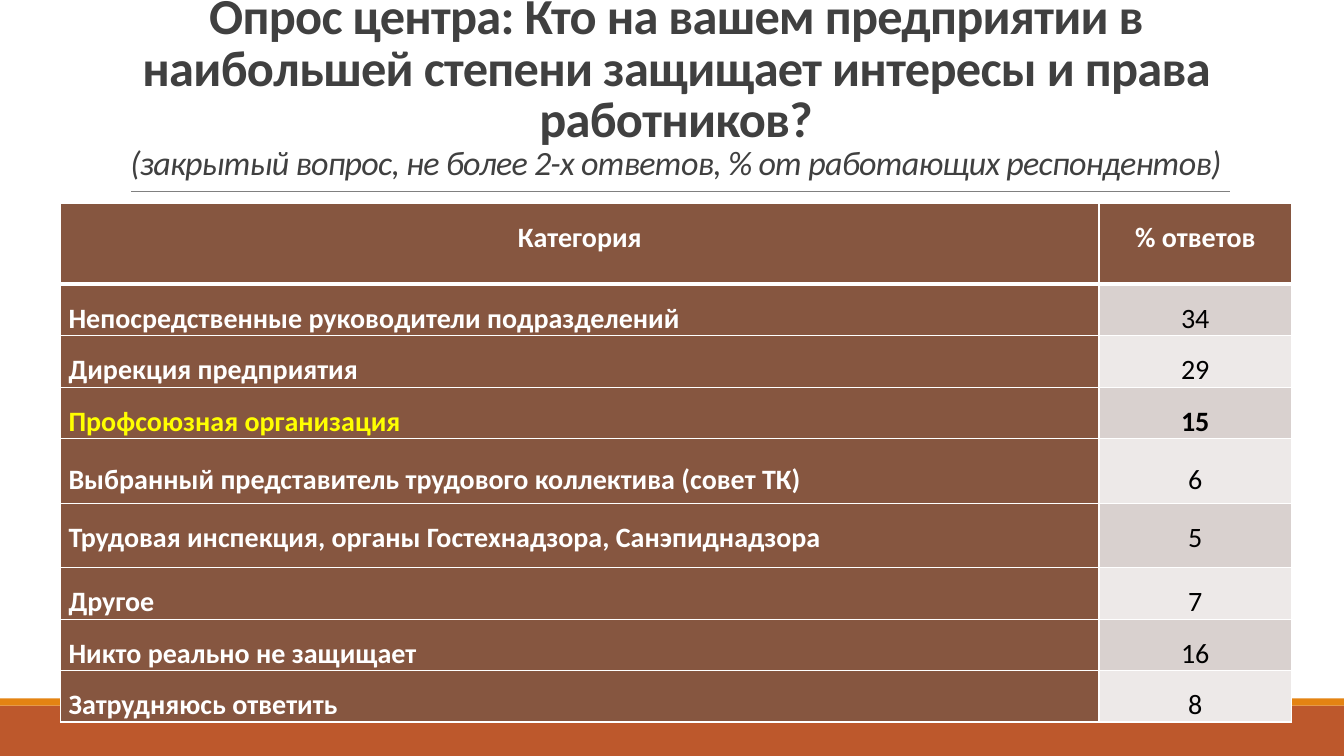
from lxml import etree
from pptx import Presentation
from pptx.dml.color import RGBColor
from pptx.enum import shapes, text
from pptx.oxml.ns import qn
from pptx.util import Inches, Pt

ALIGN = text.PP_ALIGN
ANCHOR = text.MSO_ANCHOR
BROWN, WHITE, BLACK, YELLOW = "865640", "FFFFFF", "000000", "FFFF00"
BANDS = ["D9D1CF", "EDE9E8"]
ROWS = [
    ("Непосредственные руководители подразделений", 34),
    ("Дирекция предприятия", 29),
    ("Профсоюзная организация", 15),
    ("Выбранный представитель трудового коллектива (совет ТК)", 6),
    ("Трудовая инспекция, органы Гостехнадзора, Санэпиднадзора", 5),
    ("Другое", 7),
    ("Никто реально не защищает", 16),
    ("Затрудняюсь ответить", 8),
]
HIGHLIGHT_ROW, TOP_ROW = 3, 5
HEADER_HEIGHT, ROW_HEIGHT, TALL_HEIGHT = 0.8, 0.45, 0.64
TALL_ROWS = (4, 5)


def rgb(value):
    return RGBColor.from_string(value)


class SurveySlide:
    font = "Calibri"

    def __init__(self, prs):
        self.s = prs.slides.add_slide(prs.slide_layouts[5])

    def style(self, font, size, color, bold=False, italic=False):
        font.name, font.size = self.font, Pt(size)
        font.bold, font.italic = bold, italic
        font.color.rgb = rgb(color)

    def bar(self, top, height, color):
        sp = self.s.shapes.add_shape(shapes.MSO_SHAPE.RECTANGLE, 0, Inches(top),
                                     Inches(13.33), Inches(height))
        sp.shadow.inherit = False
        sp.fill.solid()
        sp.fill.fore_color.rgb = rgb(color)
        sp.line.fill.background()

    def rule(self, left, right, y, color, width):
        line = self.s.shapes.add_connector(shapes.MSO_CONNECTOR.STRAIGHT, Inches(left),
                                           Inches(y), Inches(right), Inches(y))
        line.line.color.rgb = rgb(color)
        line.line.width = Pt(width)
        etree.SubElement(line._element.spPr, qn("a:effectLst"))

    def title(self, question, note):
        sp = self.s.shapes.title
        sp.left, sp.top = Inches(0.6), Inches(0.52)
        sp.width, sp.height = Inches(12.21), Inches(1.34)
        tf = sp.text_frame
        tf.auto_size = text.MSO_AUTO_SIZE.NONE
        tf.word_wrap = True
        tf.vertical_anchor = ANCHOR.BOTTOM
        p = tf.paragraphs[0]
        p.alignment, p.line_spacing = ALIGN.CENTER, 0.85
        for words, size, bold in ((question, 36, True), (note, 24.3, False)):
            if p.runs:
                p.add_line_break()
            r = p.add_run()
            r.text = words
            self.style(r.font, size, "404040", bold, not bold)
            r.font._element.set("spc", "-50")

    def cell(self, cell, words, fill, color, bold, align, anchor, top=1, bottom=1):
        cell.margin_left = cell.margin_right = Inches(0.08)
        cell.margin_top = cell.margin_bottom = 0
        cell.vertical_anchor = anchor
        p = cell.text_frame.paragraphs[0]
        p.text = words
        p.alignment, p.line_spacing = align, 1.5
        self.style(p.font, 20, color, bold)
        # Borders come before the fill in the cell properties
        props = cell._tc.get_or_add_tcPr()
        for side, width in (("L", 1), ("R", 1), ("T", top), ("B", bottom)):
            ln = etree.SubElement(props, qn(f"a:ln{side}"), w=str(Pt(width)))
            solid = etree.SubElement(ln, qn("a:solidFill"))
            etree.SubElement(solid, qn("a:srgbClr"), val=WHITE)
        cell.fill.solid()
        cell.fill.fore_color.rgb = rgb(fill)

    def table(self, headings, rows):
        table = self.s.shapes.add_table(len(rows) + 1, 2, Inches(0.6), Inches(2.02),
                                        Inches(12.21), Inches(4.8)).table
        for column, width in zip(table.columns, (10.3, 1.91)):
            column.width = Inches(width)
        table.rows[0].height = Inches(HEADER_HEIGHT)
        for i, heading in enumerate(headings):
            self.cell(table.cell(0, i), heading, BROWN, WHITE, True,
                      ALIGN.CENTER, ANCHOR.TOP, bottom=3)
        for i, (category, share) in enumerate(rows, 1):
            table.rows[i].height = Inches(TALL_HEIGHT if i in TALL_ROWS else ROW_HEIGHT)
            marked = i == HIGHLIGHT_ROW
            anchor = ANCHOR.TOP if i == TOP_ROW else ANCHOR.MIDDLE
            top = 3 if i == 1 else 1
            self.cell(table.cell(i, 0), category, BROWN, YELLOW if marked else WHITE,
                      True, ALIGN.JUSTIFY, anchor, top)
            self.cell(table.cell(i, 1), str(share), BANDS[(i - 1) % 2], BLACK,
                      marked, ALIGN.CENTER, anchor, top)


def main():
    prs = Presentation()
    prs.slide_width, prs.slide_height = Inches(13.33), Inches(7.5)
    slide = SurveySlide(prs)

    # Footer bars and title rule
    slide.bar(7, 0.5, "BD582C")
    slide.bar(6.93, 0.07, "E48312")
    slide.rule(1.3, 12.2, 1.9, "808080", 0.5)

    # Title and survey results
    slide.title("Опрос центра: Кто на вашем предприятии в наибольшей степени "
                "защищает интересы и права работников?",
                "(закрытый вопрос, не более 2-х ответов, % от работающих респондентов)")
    slide.table(("Категория", "% ответов"), ROWS)
    prs.save("out.pptx")


if __name__ == "__main__":
    main()
